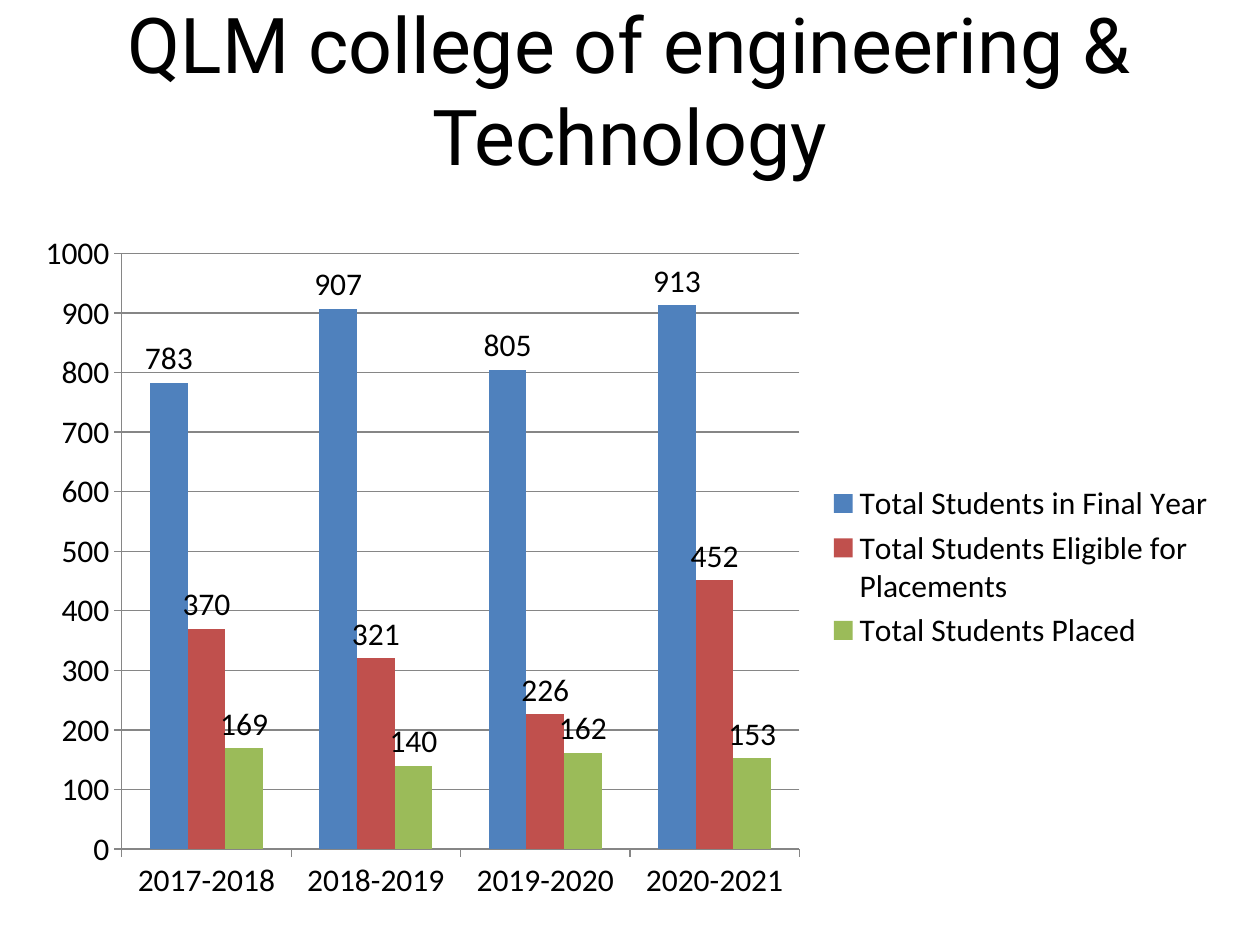
from dataclasses import dataclass

from pptx import Presentation
from pptx.chart.data import CategoryChartData
from pptx.dml.color import RGBColor
from pptx.enum.chart import XL_CHART_TYPE as ChartType
from pptx.enum.chart import XL_LABEL_POSITION as LabelPosition
from pptx.enum.chart import XL_LEGEND_POSITION as LegendPosition
from pptx.enum.chart import XL_TICK_MARK as TickMark
from pptx.enum.text import MSO_ANCHOR as Anchor
from pptx.enum.text import PP_ALIGN as Align
from pptx.util import Pt

BLACK = RGBColor(0x00, 0x00, 0x00)
GRAY = RGBColor(0x86, 0x86, 0x86)
BLUE = RGBColor(0x4F, 0x81, 0xBD)
RED = RGBColor(0xC0, 0x50, 0x4D)
GREEN = RGBColor(0x9B, 0xBB, 0x59)


@dataclass(frozen=True)
class StudentSeries:
    name: str
    values: tuple[int, ...]
    color: RGBColor


YEARS = ("2017-2018", "2018-2019", "2019-2020", "2020-2021")
STUDENTS = (
    StudentSeries("Total Students in Final Year", (783, 907, 805, 913), BLUE),
    StudentSeries("Total Students Eligible for Placements", (370, 321, 226, 452), RED),
    StudentSeries("Total Students Placed", (169, 140, 162, 153), GREEN),
)


def style_font(font, name: str, size: float) -> None:
    font.name = name
    font.size = Pt(size)
    font.color.rgb = BLACK


def style_line(line) -> None:
    line.color.rgb = GRAY
    line.width = Pt(0.75)


def add_title(slide, text: str) -> None:
    title = slide.shapes.title
    title.left, title.top, title.width, title.height = Pt(0), Pt(5.76), Pt(720), Pt(90)
    frame = title.text_frame
    frame.word_wrap = True
    frame.vertical_anchor = Anchor.MIDDLE
    paragraph = frame.paragraphs[0]
    paragraph.alignment = Align.CENTER
    run = paragraph.add_run()
    run.text = text
    style_font(run.font, "Roboto", 44)


def add_placement_chart(slide) -> None:
    data = CategoryChartData(number_format="General")
    data.categories = YEARS
    for students in STUDENTS:
        data.add_series(students.name, students.values)
    chart = slide.shapes.add_chart(
        ChartType.COLUMN_CLUSTERED, Pt(12.24), Pt(126), Pt(689.76), Pt(396), data
    ).chart
    chart.has_title = False
    style_font(chart.font, "Calibri", 18)

    # Legend
    chart.has_legend = True
    chart.legend.position = LegendPosition.RIGHT
    chart.legend.include_in_layout = False

    # Axes and gridlines
    for axis in (chart.category_axis, chart.value_axis):
        axis.major_tick_mark = TickMark.OUTSIDE
        axis.minor_tick_mark = TickMark.NONE
        style_line(axis.format.line)
    chart.value_axis.has_major_gridlines = True
    style_line(chart.value_axis.major_gridlines.format.line)

    # Columns and their values
    plot = chart.plots[0]
    plot.gap_width = 150
    plot.overlap = 0
    plot.vary_by_categories = False
    for series, students in zip(plot.series, STUDENTS):
        series.format.fill.solid()
        series.format.fill.fore_color.rgb = students.color
        labels = series.data_labels
        labels.show_value = True
        labels.position = LabelPosition.OUTSIDE_END


def main() -> None:
    presentation = Presentation()
    presentation.slide_width, presentation.slide_height = Pt(720), Pt(540)
    title_only = presentation.slide_layouts[5]
    slide = presentation.slides.add_slide(title_only)
    add_title(slide, "QLM college of engineering & Technology")
    add_placement_chart(slide)
    presentation.save("out.pptx")


if __name__ == "__main__":
    main()
